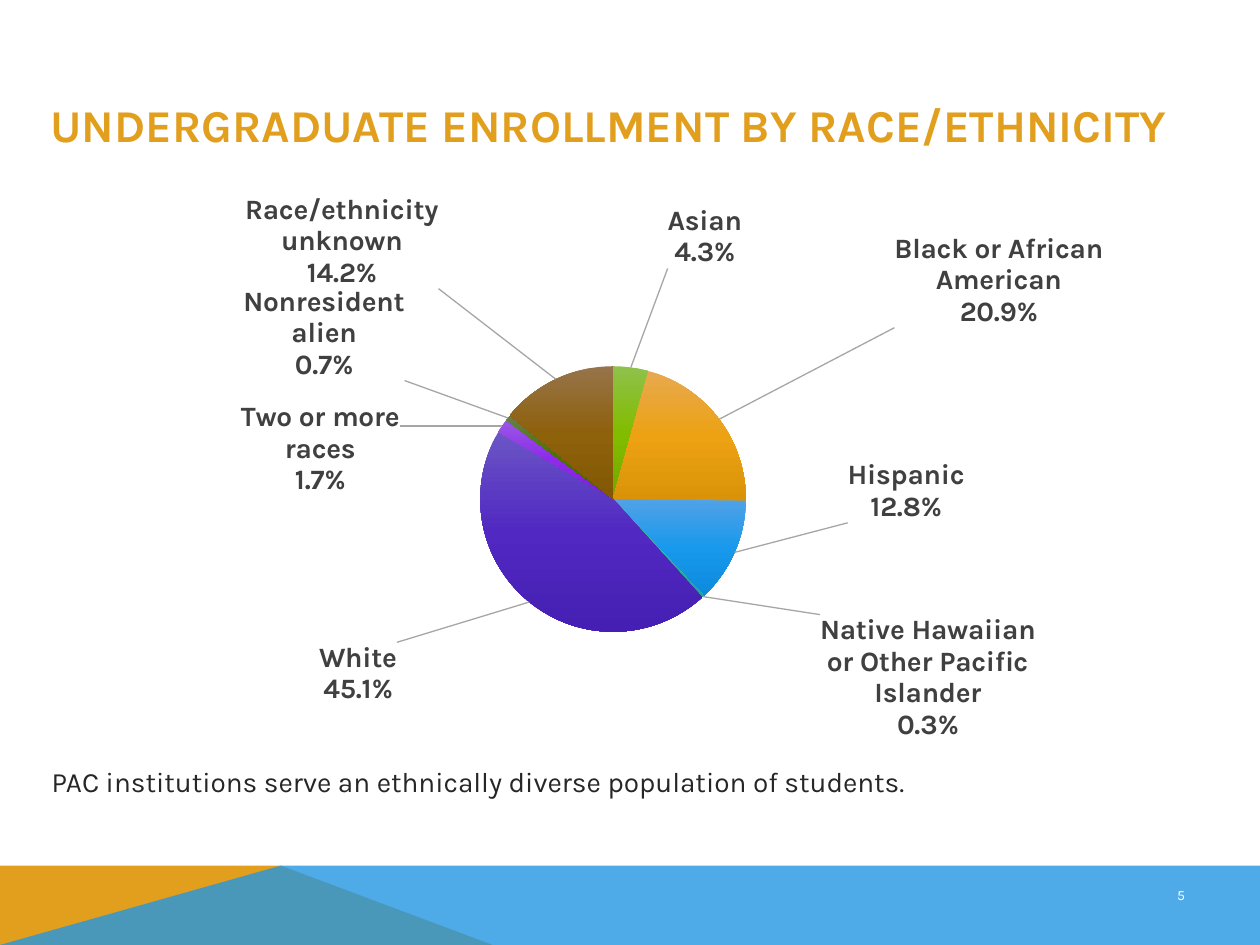
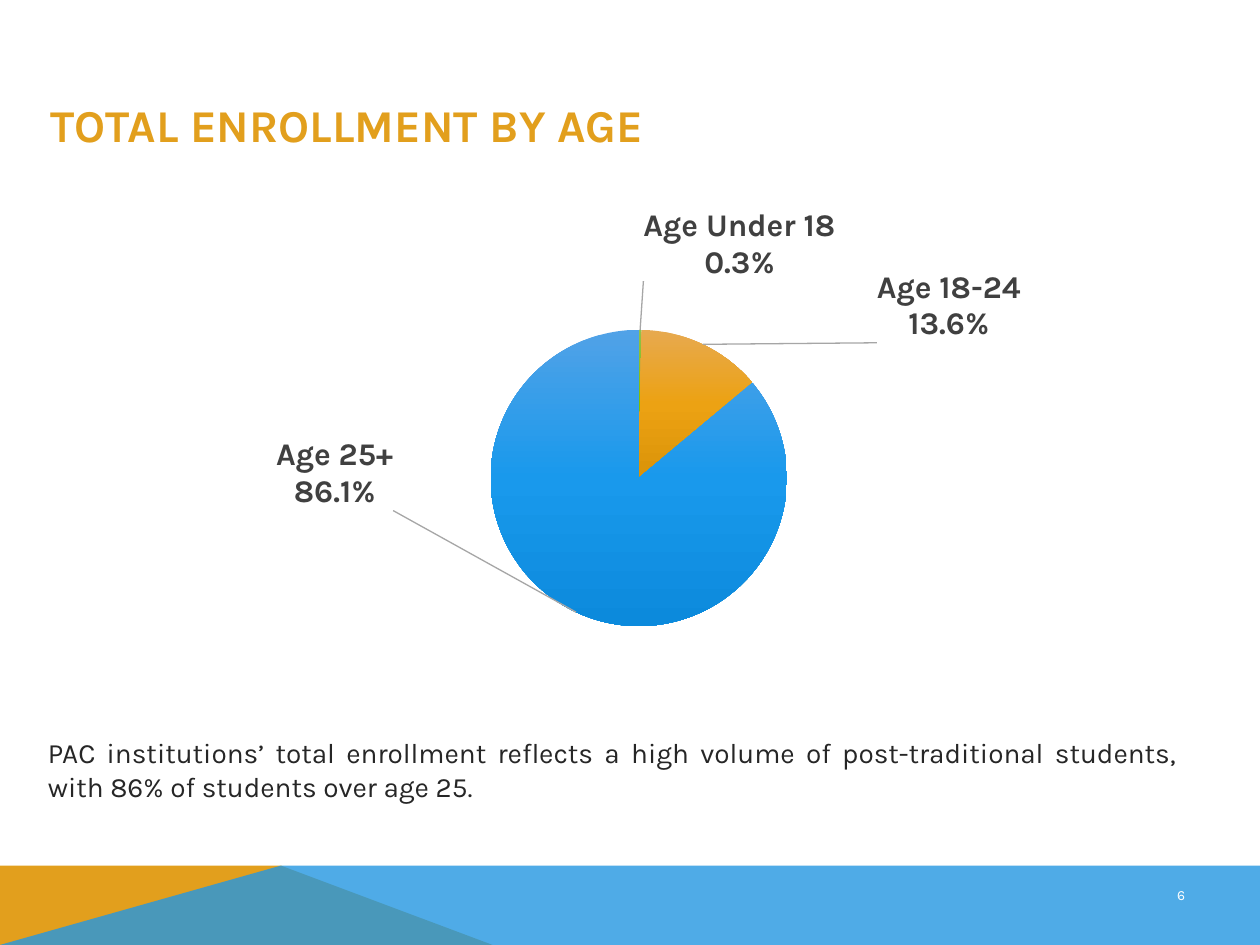
from math import cos, pi, sin
from pptx import Presentation
from pptx.chart.data import CategoryChartData
from pptx.dml.color import RGBColor
from pptx.enum.chart import XL_CHART_TYPE, XL_LABEL_POSITION
from pptx.enum.text import MSO_ANCHOR, PP_ALIGN
from pptx.oxml import parse_xml
from pptx.oxml.ns import nsdecls, qn
from pptx.util import Inches, Pt

PIE = XL_CHART_TYPE.PIE
OUTSIDE = XL_LABEL_POSITION.OUTSIDE_END
MIDDLE = MSO_ANCHOR.MIDDLE
LEFT, CENTER, JUSTIFY = PP_ALIGN.LEFT, PP_ALIGN.CENTER, PP_ALIGN.JUSTIFY

FONT = "Karla"
GOLD, BLUE, WHITE = "E29F1D", "2397E2", "FFFFFF"
LABEL_GREY, TEXT_GREY, LEADER_GREY = "404040", "262626", "A6A6A6"
W, H, BAND_TOP = 10, 7.5, 6.87
LABEL_GAP = 0.06
GRADIENTS = [
    ("8FC14B", "82BC00", "74A700"), ("E7A94F", "ECA213", "DA9308"),
    ("51A2E7", "1999EC", "0C8ADC"), ("57B7AE", "2FB2A7", "25A399"),
    ("6B55C5", "5129C2", "451EB3"), ("9A58E5", "8D2BE9", "7E1DD8"),
    ("67804B", "4E7100", "456400"), ("96744C", "8E610B", "835805"),
]
BANDS = [
    (GOLD, 100, [(0, H), (0, BAND_TOP), (2.23, BAND_TOP), (3.91, H)]),
    (BLUE, 80, [(0, H), (2.23, BAND_TOP), (W, BAND_TOP), (W, H)]),
]
SLIDES = [
    {
        "title": "UNDERGRADUATE ENROLLMENT BY RACE/ETHNICITY",
        "number": "5",
        "caption": "PAC institutions serve an ethnically diverse population of students.",
        "caption_box": (0.3, 6.01, 9.48, 0.38),
        "caption_align": LEFT,
        "chart_box": (0.15, 0.99, 9.45, 4.89),
        "plot": (0.275, 0.392, 0.448, 0.431),
        "label_size": 16,
        "slices": [
            ("Asian", 4.3, 5.3, 2.13),
            ("Black or African\nAmerican", 20.9, 7.1, 2.6),
            ("Hispanic", 12.8, 6.73, 3.65),
            ("Native Hawaiian\nor Other Pacific\nIslander", 0.3, 6.51, 4.88),
            ("White", 45.1, 3.15, 5.1),
            ("Two or more\nraces", 1.7, 3.17, 3.94),
            ("Nonresident\nalien", 0.7, 3.21, 3.02),
            ("Race/ethnicity\nunknown", 14.2, 3.48, 2.29),
        ],
    },
    {
        "title": "TOTAL ENROLLMENT BY AGE",
        "number": "6",
        "caption": "PAC institutions’ total enrollment reflects a high volume of "
                   "post-traditional students, with 86% of students over age 25.",
        "caption_box": (0.27, 5.78, 9.18, 0.65),
        "caption_align": JUSTIFY,
        "chart_box": (0.15, 1.49, 9.85, 4.78),
        "plot": (0.2, 0.236, 0.599, 0.492),
        "label_size": 18,
        "slices": [
            ("Age Under 18", 0.3, 5.87, 2.23),
            ("Age 18-24", 13.6, 6.96, 2.72),
            ("Age 25+", 86, 3.12, 3.47),
        ],
    },
]


def set_font(font, size, color, bold=False):
    font.name, font.size, font.bold = FONT, Pt(size), bold
    font.color.rgb = RGBColor.from_string(color)


def manual_layout(x, y, extra=""):
    return parse_xml(
        f'<c:layout {nsdecls("c")}><c:manualLayout>{extra}'
        f'<c:x val="{x:.4f}"/><c:y val="{y:.4f}"/></c:manualLayout></c:layout>')


prs = Presentation()
prs.slide_width, prs.slide_height = Inches(W), Inches(H)
layout = prs.slide_layouts[5]
for ph in list(layout.placeholders)[1:]:
    ph._element.getparent().remove(ph._element)

for index, item in enumerate(SLIDES):
    s = prs.slides.add_slide(layout)

    if index == 0:
        for depth, (color, opacity, points) in enumerate(BANDS):
            x, y = points[0]
            builder = s.shapes.build_freeform(Inches(x), Inches(y))
            builder.add_line_segments([(Inches(x), Inches(y)) for x, y in points[1:]])
            band = builder.convert_to_shape()
            band.shadow.inherit = False
            band.line.fill.background()
            band.fill.solid()
            band.fill.fore_color.rgb = RGBColor.from_string(color)
            if opacity < 100:
                clr = band._element.spPr.find(".//" + qn("a:srgbClr"))
                clr.append(parse_xml(f'<a:alpha {nsdecls("a")} val="{opacity * 1000}"/>'))
            layout.shapes._spTree.insert(2 + depth, band._element)

    title = s.shapes.title
    title.left, title.top, title.width, title.height = map(Inches, (0.3, 0.69, 9.16, 0.6))
    tf = title.text_frame
    tf.text = item["title"]
    tf.vertical_anchor = MIDDLE
    tf.paragraphs[0].alignment = LEFT
    set_font(tf.paragraphs[0].font, 26, GOLD, True)

    data = CategoryChartData()
    data.categories = [name.replace("\n", " ") for name, *_ in item["slices"]]
    data.add_series("Series 1", [value for _, value, *_ in item["slices"]])
    left, top, width, height = item["chart_box"]
    chart = s.shapes.add_chart(PIE, *map(Inches, item["chart_box"]), data).chart
    chart.has_legend = chart.has_title = False
    set_font(chart.font, 10, "000000")

    px, py, pw, ph = item["plot"]
    area = chart._chartSpace.find(".//" + qn("c:plotArea"))
    for old in area.findall(qn("c:layout")):
        area.remove(old)
    plot_layout = manual_layout(
        px, py, '<c:layoutTarget val="inner"/><c:xMode val="edge"/><c:yMode val="edge"/>')
    for tag, share in (("w", pw), ("h", ph)):
        plot_layout[0].append(parse_xml(f'<c:{tag} {nsdecls("c")} val="{share}"/>'))
    area.insert(0, plot_layout)

    series = chart.plots[0].series[0]
    labels = series.data_labels
    labels.show_value, labels.show_category_name, labels.show_percentage = False, True, True
    labels.number_format, labels.number_format_is_linked = "0.0%", False
    labels.position = OUTSIDE
    set_font(labels.font, item["label_size"], LABEL_GREY, True)
    for old in labels._element.findall(qn("c:showLeaderLines")):
        labels._element.remove(old)
    labels._element.append(parse_xml(f'<c:showLeaderLines {nsdecls("c")} val="1"/>'))
    labels._element.append(parse_xml(
        f'<c:leaderLines {nsdecls("c", "a")}><c:spPr><a:ln w="9525"><a:solidFill>'
        f'<a:srgbClr val="{LEADER_GREY}"/></a:solidFill></a:ln></c:spPr></c:leaderLines>'))

    center_x = left + (px + pw / 2) * width
    center_y = top + (py + ph / 2) * height
    reach = min(pw * width, ph * height) / 2 + LABEL_GAP
    total = sum(value for _, value, *_ in item["slices"])
    passed = 0
    for i, (name, value, corner_x, corner_y) in enumerate(item["slices"]):
        point = series.points[i]
        fill = point.format.fill
        fill.gradient()
        fill.gradient_angle = 270
        stops = point.format._element.find(".//" + qn("a:gsLst"))
        for old in list(stops):
            stops.remove(old)
        for pos, color in zip((0, 50000, 100000), GRADIENTS[i]):
            stops.append(parse_xml(
                f'<a:gs {nsdecls("a")} pos="{pos}"><a:srgbClr val="{color}"/></a:gs>'))

        label = point.data_label
        label.text_frame.text = f"{name}\n{value / total:.1%}"
        for p in label.text_frame.paragraphs:
            set_font(p.runs[0].font, item["label_size"], LABEL_GREY, True)
        label.position = OUTSIDE
        dlbl = labels._element.findall(qn("c:dLbl"))[i]
        for tag, shown in (("showVal", 0), ("showCatName", 1), ("showPercent", 1)):
            dlbl.find(qn("c:" + tag)).set("val", str(shown))
        angle = 2 * pi * (passed + value / 2) / total
        passed += value
        dx = (corner_x - center_x - reach * sin(angle)) / width
        dy = (corner_y - center_y + reach * cos(angle)) / height
        dlbl.find(qn("c:idx")).addnext(manual_layout(dx, dy))

    texts = [
        (item["caption"], item["caption_box"], item["caption_align"], 16, TEXT_GREY),
        (item["number"], (9.11, 6.98, 0.53, 0.56), CENTER, 8, WHITE),
    ]
    for text, box, align, size, color in texts:
        tf = s.shapes.add_textbox(*map(Inches, box)).text_frame
        tf.word_wrap = True
        tf.margin_left = tf.margin_right = Inches(0.11)
        tf.margin_top = tf.margin_bottom = Inches(0.06)
        p = tf.paragraphs[0]
        p.text, p.alignment = text, align
        set_font(p.font, size, color)

prs.save("out.pptx")
